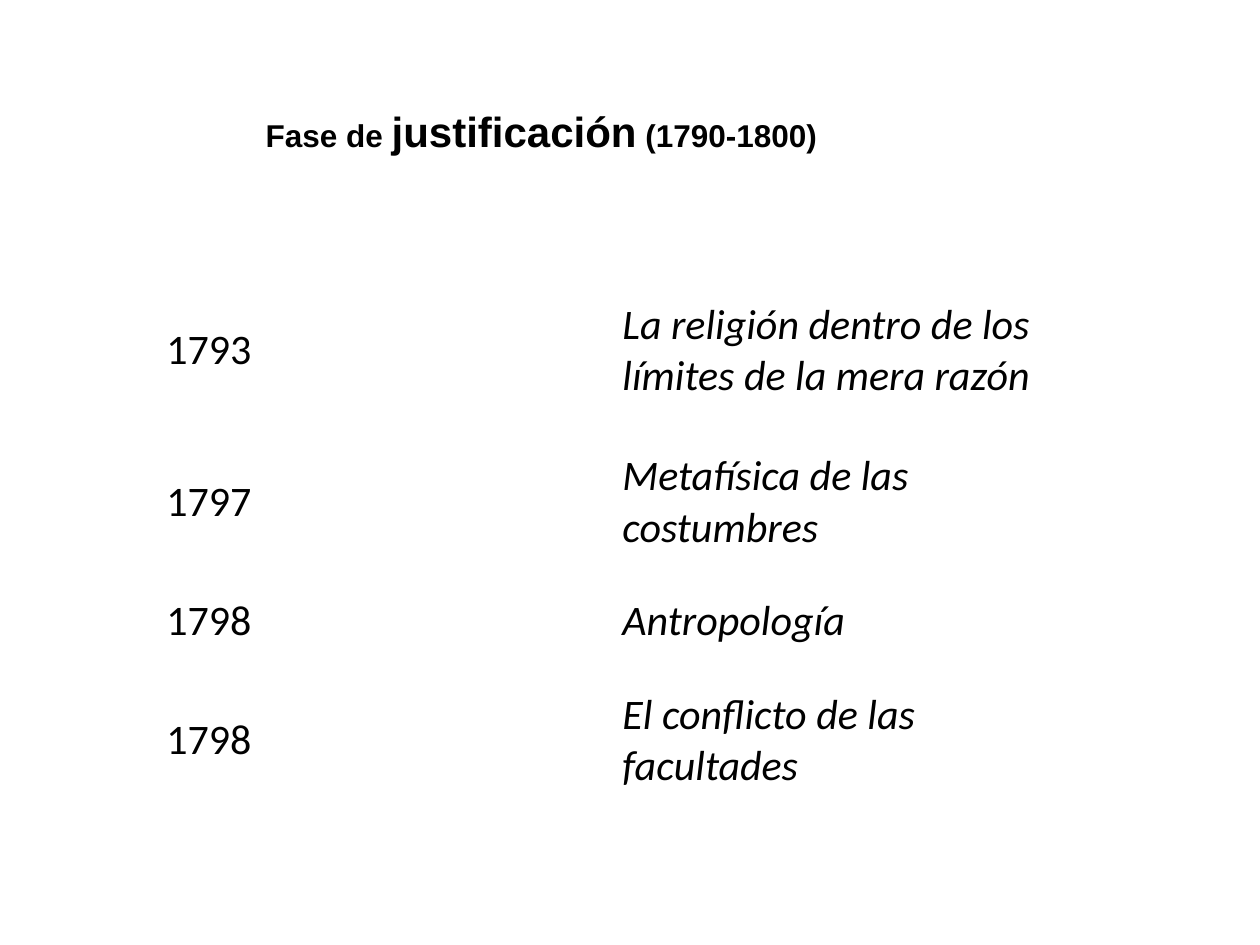
from dataclasses import dataclass

from pptx import Presentation
from pptx.dml.color import RGBColor
from pptx.enum.text import MSO_ANCHOR
from pptx.util import Inches, Pt


@dataclass(frozen=True)
class Theme:
    """Colours, fonts and type sizes of the slide."""
    ink: RGBColor = RGBColor(0, 0, 0)
    title_font: str = "Arial"
    body_font: str = "Calibri"
    small: int = 18
    large: int = 24


THEME = Theme()
WIDTH, HEIGHT = 10, 7.5
TITLE_BOX = (2.01, 0.79, 4.58, 0.5)
TABLE_BOX = (1.22, 2.18, 7.24, 4.3)
ROW_SHARES = (0.28, 0.28, 0.16, 0.28)
TITLE = (
    ("Fase de ", THEME.small),
    ("justificación", THEME.large),
    (" (1790-1800)", THEME.small),
)
WORKS = (
    ("1793", "La religión dentro de los límites de la mera razón"),
    ("1797", "Metafísica de las costumbres"),
    ("1798", "Antropología"),
    ("1798", "El conflicto de las facultades"),
)


def add_run(p, text, font, size, bold=False, italic=False):
    """Add one styled run to a paragraph."""
    r = p.add_run()
    r.text = text
    r.font.name, r.font.size = font, Pt(size)
    r.font.bold, r.font.italic = bold, italic
    r.font.color.rgb = THEME.ink


def add_title(s, box):
    """Place the phase title in its box."""
    tf = s.shapes.add_textbox(*map(Inches, box)).text_frame
    tf.word_wrap = False
    tf.vertical_anchor = MSO_ANCHOR.MIDDLE
    for text, size in TITLE:
        add_run(tf.paragraphs[0], text, THEME.title_font, size, bold=True)


def add_works(s, box):
    """Place the table of years and works in its box."""
    table = s.shapes.add_table(len(WORKS), 2, *map(Inches, box)).table
    table.first_row = table.horz_banding = False
    for row, share, work in zip(table.rows, ROW_SHARES, WORKS):
        row.height = Inches(box[3] * share)
        for col, (cell, text) in enumerate(zip(row.cells, work)):
            cell.fill.background()
            cell.vertical_anchor = MSO_ANCHOR.MIDDLE
            p = cell.text_frame.paragraphs[0]
            add_run(p, text, THEME.body_font, THEME.large, italic=col == 1)


def main():
    """Build and save the slide."""
    prs = Presentation()
    prs.slide_width, prs.slide_height = Inches(WIDTH), Inches(HEIGHT)
    s = prs.slides.add_slide(prs.slide_layouts[6])
    add_works(s, TABLE_BOX)
    add_title(s, TITLE_BOX)
    prs.save("out.pptx")


if __name__ == "__main__":
    main()
